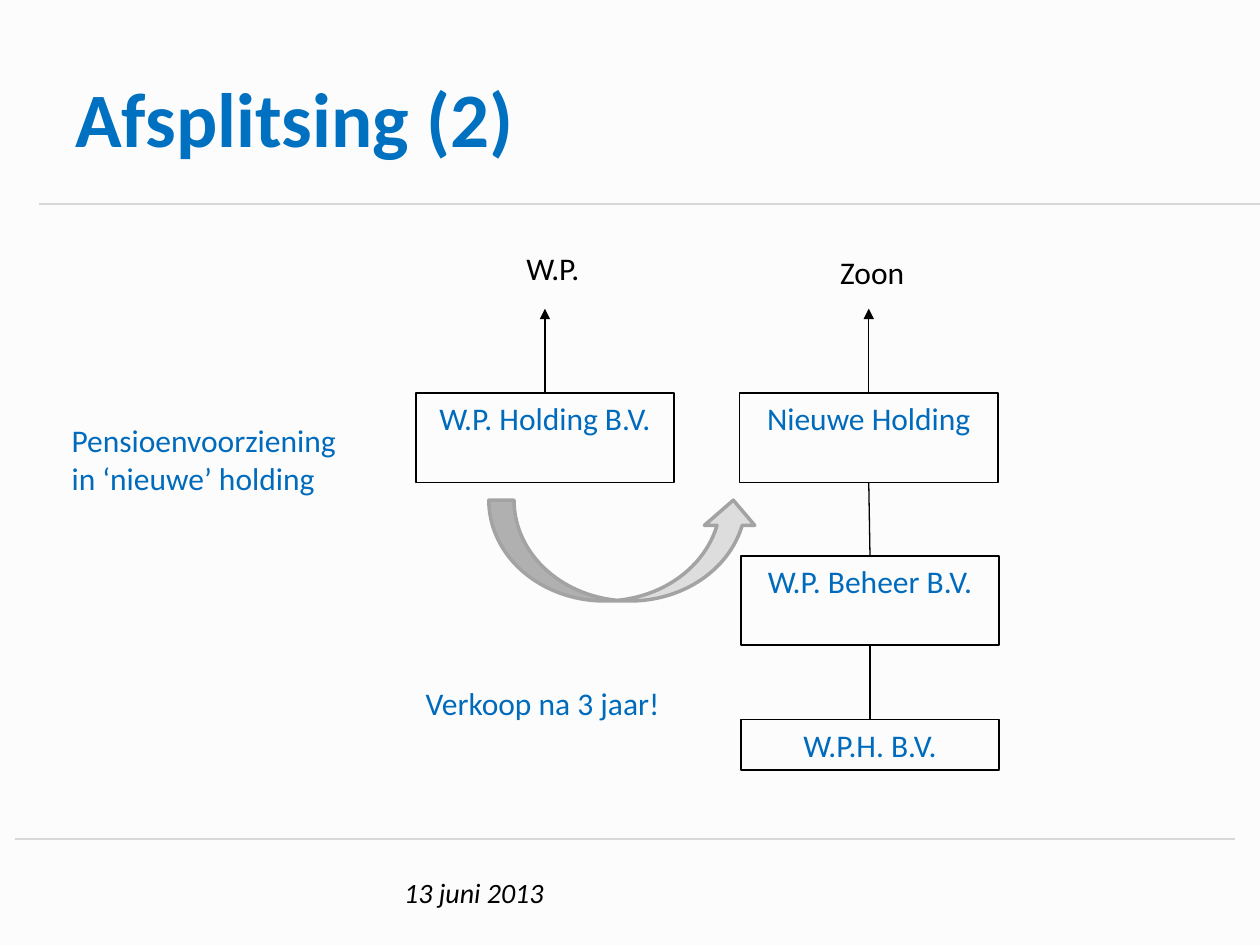
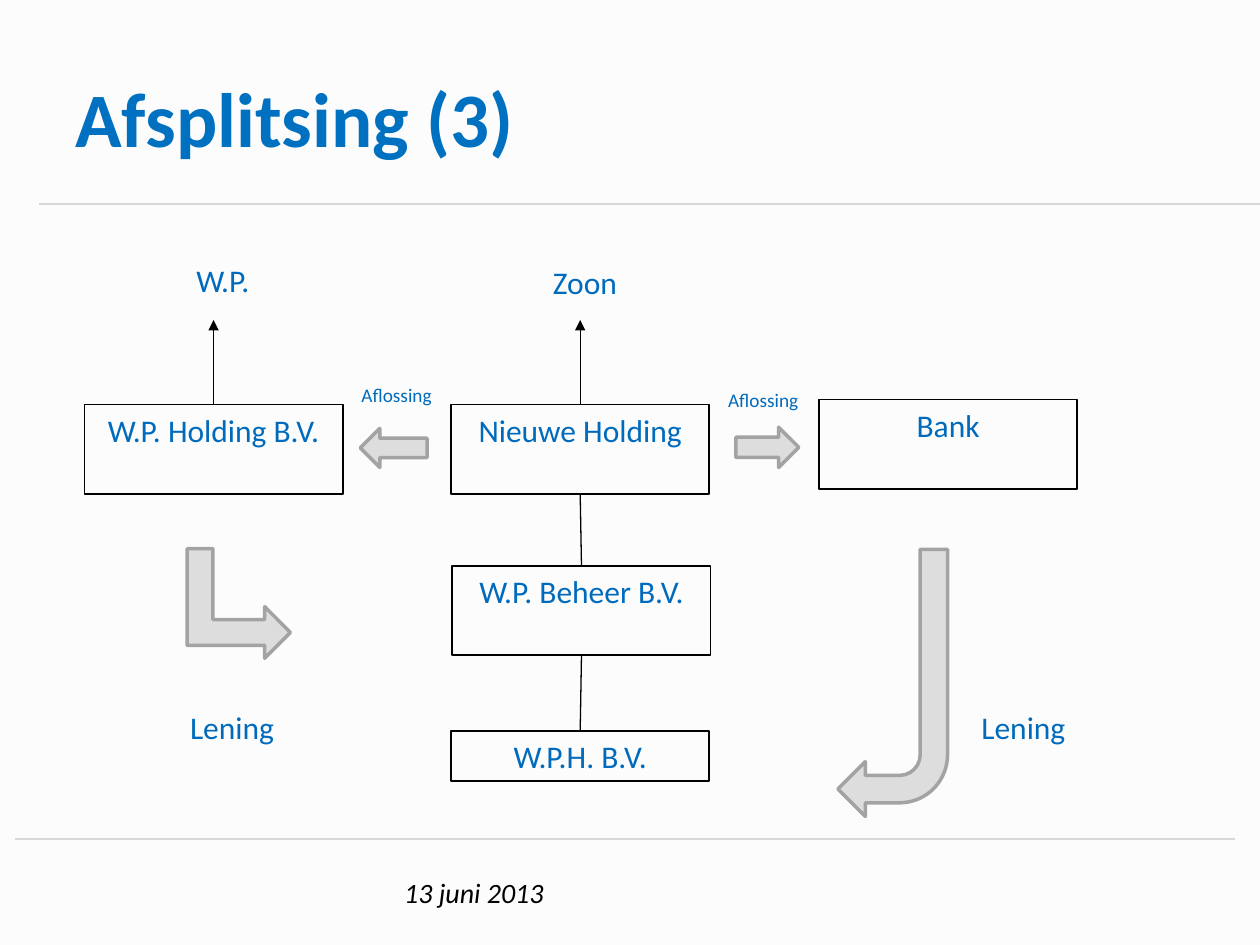
"""Builds two slides that show a company split-off as diagrams."""
from pptx import Presentation
from pptx.dml.color import RGBColor
from pptx.enum.shapes import MSO_CONNECTOR, MSO_SHAPE
from pptx.enum.text import MSO_ANCHOR, PP_ALIGN
from pptx.oxml.ns import qn
from pptx.util import Inches, Pt
from lxml import etree

STRAIGHT = MSO_CONNECTOR.STRAIGHT
RECT = MSO_SHAPE.RECTANGLE
CURVE = MSO_SHAPE.CURVED_UP_ARROW
BENT_UP = MSO_SHAPE.BENT_UP_ARROW
BENT = MSO_SHAPE.BENT_ARROW
LEFT = MSO_SHAPE.LEFT_ARROW
RIGHT = MSO_SHAPE.RIGHT_ARROW
TOP, MIDDLE = MSO_ANCHOR.TOP, MSO_ANCHOR.MIDDLE
START, CENTER = PP_ALIGN.LEFT, PP_ALIGN.CENTER

PAPER = RGBColor(0xFC, 0xFC, 0xFC)
BLACK = RGBColor(0, 0, 0)
TITLE = RGBColor(0x00, 0x70, 0xC0)
BLUE = RGBColor(0x00, 0x6B, 0xBC)
RULE = RGBColor(0xD8, 0xD8, 0xD8)
SILVER = RGBColor(0xDD, 0xDD, 0xDD)
EDGE = RGBColor(0xA3, 0xA3, 0xA3)

FONT = "Calibri"
DATE = "13 juni 2013"
RULES = [(0.31, 1.62, 10, 1.62), (0.12, 6.66, 9.8, 6.66)]
BOX_W, TALL, LOW = 2.05, 0.71, 0.4
RISE = 0.67

SLIDES = [
    {
        "title": "Afsplitsing (2)",
        "boxes": {
            "Nieuwe Holding": (5.87, 3.12, TALL),
            "W.P. Beheer B.V.": (5.88, 4.41, TALL),
            "W.P.H. B.V.": (5.88, 5.71, LOW),
            "W.P. Holding B.V.": (3.3, 3.12, TALL),
        },
        "labels": [
            ("W.P.", (4.08, 1.93, 1.26, 0.4), {"color": BLACK}),
            ("Zoon", (6.57, 1.96, 1.26, 0.4), {"color": BLACK}),
            ("Pensioenvoorziening in ‘nieuwe’ holding",
             (0.47, 3.29, 2.53, 0.71), {}),
            ("Verkoop na 3 jaar!", (3.28, 5.38, 2.53, 0.4), {}),
        ],
        "arrows": [(CURVE, (3.88, 3.97, 2.14, 0.8), 0)],
    },
    {
        "title": "Afsplitsing (3)",
        "boxes": {
            "Nieuwe Holding": (3.58, 3.21, TALL),
            "W.P. Beheer B.V.": (3.59, 4.49, TALL),
            "W.P.H. B.V.": (3.58, 5.8, LOW),
            "W.P. Holding B.V.": (0.67, 3.21, TALL),
            "Bank": (6.5, 3.17, TALL),
        },
        "labels": [
            ("W.P.", (1.46, 2.02, 1.26, 0.4), {}),
            ("Zoon", (4.29, 2.04, 1.26, 0.4), {}),
            ("Lening", (1.41, 5.57, 1.31, 0.4), {}),
            ("Lening", (7.69, 5.57, 1.31, 0.4), {}),
            ("Aflossing", (2.77, 2.99, 0.81, 0.29), {"size": 11}),
            ("Aflossing", (5.68, 3.03, 0.81, 0.29), {"size": 11}),
        ],
        "arrows": [
            (BENT_UP, (1.46, 4.38, 0.87, 0.82), 90),
            (LEFT, (2.86, 3.4, 0.53, 0.31), 0),
            (RIGHT, (5.84, 3.39, 0.5, 0.32), 0),
            (BENT, (6.65, 4.36, 0.87, 2.12), 180),
        ],
    },
]
OWNED = ["Nieuwe Holding", "W.P. Holding B.V."]
CHAIN = ["Nieuwe Holding", "W.P. Beheer B.V.", "W.P.H. B.V."]


def write(shape, text, size=18, color=BLUE, bold=False, italic=False,
          align=START, anchor=TOP):
    frame = shape.text_frame
    frame.word_wrap = True
    frame.vertical_anchor = anchor
    para = frame.paragraphs[0]
    para.alignment = align
    run = para.add_run()
    run.text = text
    font = run.font
    font.name, font.size = FONT, Pt(size)
    font.bold, font.italic = bold, italic
    font.color.rgb = color


def label(slide, text, place, **style):
    write(slide.shapes.add_textbox(*map(Inches, place)), text, **style)


def line(slide, ends, color=BLACK, width=0.75, head=False):
    link = slide.shapes.add_connector(STRAIGHT, *map(Inches, ends))
    link.line.color.rgb = color
    link.line.width = Pt(width)
    props = link._element.spPr
    if head:
        tip = etree.SubElement(props.find(qn("a:ln")), qn("a:tailEnd"))
        tip.set("type", "triangle")
    etree.SubElement(props, qn("a:effectLst"))


def figure(slide, kind, place, fill=None, color=BLACK, width=1, turn=0):
    shape = slide.shapes.add_shape(kind, *map(Inches, place))
    shape.shadow.inherit = False
    shape.rotation = turn
    if fill is None:
        shape.fill.background()
    else:
        shape.fill.solid()
        shape.fill.fore_color.rgb = fill
    shape.line.color.rgb = color
    shape.line.width = Pt(width)
    return shape


def frame(slide, title):
    for ends in RULES:
        line(slide, ends, RULE, 1.5)
    label(slide, DATE, (3.11, 6.9, 4.02, 0.37),
          size=16, color=BLACK, italic=True)
    label(slide, title, (0.5, 0.3, 9, 1.25),
          size=44, color=TITLE, bold=True, anchor=MIDDLE)


def chart(slide, boxes):
    for name, (left, top, tall) in boxes.items():
        box = figure(slide, RECT, (left, top, BOX_W, tall))
        write(box, name, align=CENTER)
    half = BOX_W / 2
    for name in OWNED:
        left, top, _ = boxes[name]
        line(slide, (left + half, top, left + half, top - RISE), head=True)
    for upper, lower in zip(CHAIN, CHAIN[1:]):
        left, top, tall = boxes[upper]
        end, foot, _ = boxes[lower]
        line(slide, (left + half, top + tall, end + half, foot))


def main():
    deck = Presentation()
    deck.slide_width, deck.slide_height = Inches(10), Inches(7.5)
    paper = deck.slide_master.background.fill
    paper.solid()
    paper.fore_color.rgb = PAPER
    for page in SLIDES:
        slide = deck.slides.add_slide(deck.slide_layouts[6])
        frame(slide, page["title"])
        chart(slide, page["boxes"])
        for kind, place, turn in page["arrows"]:
            figure(slide, kind, place, SILVER, EDGE, 2, turn)
        for text, place, style in page["labels"]:
            label(slide, text, place, **style)
    deck.save("out.pptx")


if __name__ == "__main__":
    main()
